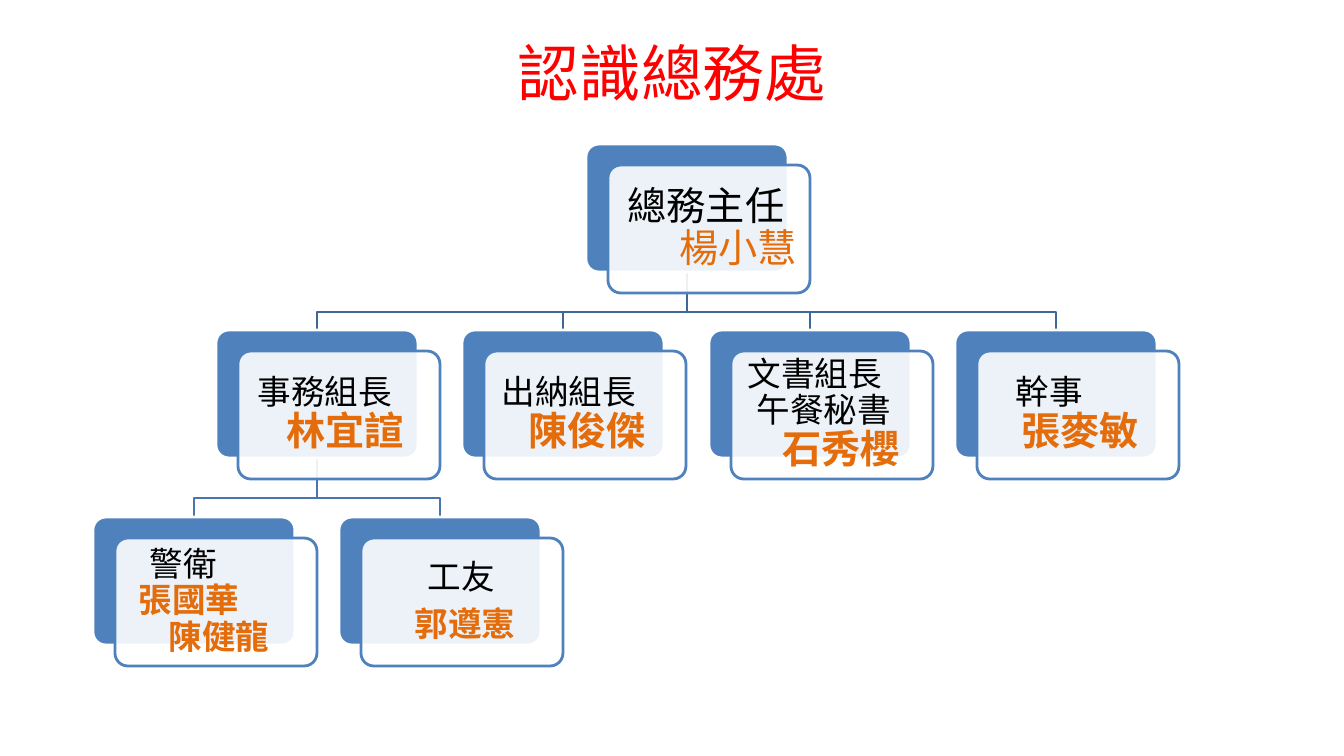
from lxml import etree
from pptx import Presentation
from pptx.dml.color import RGBColor
from pptx.enum.shapes import MSO_SHAPE
from pptx.enum.text import MSO_ANCHOR, PP_ALIGN
from pptx.oxml.ns import qn
from pptx.util import Emu, Pt

ROUND = MSO_SHAPE.ROUNDED_RECTANGLE
MIDDLE = MSO_ANCHOR.MIDDLE
LEFT, CENTER = PP_ALIGN.LEFT, PP_ALIGN.CENTER

RED = RGBColor(0xFF, 0x00, 0x00)
BLACK = RGBColor(0x00, 0x00, 0x00)
WHITE = RGBColor(0xFF, 0xFF, 0xFF)
ORANGE = RGBColor(0xE4, 0x6C, 0x0A)
BLUE = RGBColor(0x4F, 0x81, 0xBD)
NAVY = RGBColor(0x3F, 0x67, 0x97)
STEEL = RGBColor(0x48, 0x75, 0xAC)

LATIN, HAN = "Calibri", "Noto Sans CJK SC"
CARD_W, CARD_H = 202, 128
SHIFT_X, SHIFT_Y = 22, 21
DROP = 40


def px(n):
    return Emu(round(n * 9071.43))


def post(text, indent, size=24):
    return dict(text=text, indent=indent, size=size)


def name(text, indent, size=28, bold=True):
    return dict(text=text, indent=indent, size=size, bold=bold,
                color=ORANGE, font=HAN)


# Each card: column in half steps, row, lines of text, space between lines
CARDS = {
    "chief": (4, 0, [dict(post("總務主任", 16, 28), font=HAN),
                     name("楊小慧", 68, bold=False)], 0),
    "affairs": (1, 1, [post("事務組長", 16), name("林宜諠", 45)], 0),
    "guard": (0, 2, [post("警衛", 31), name("張國華", 20, 24),
                     name("陳健龍", 50, 24)], 0),
    "worker": (2, 2, [post("工友", 63), name("郭遵憲", 50, 24)], 8),
    "cashier": (3, 1, [post("出納組長", 14), name("陳俊傑", 41)], 0),
    "papers": (5, 1, [post("文書組長", 13), post("午餐秘書", 22),
                      name("石秀櫻", 48)], 0),
    "clerk": (7, 1, [post("幹事", 35), name("張麥敏", 41)], 0),
}
LINKS = [
    ("chief", "clerk", NAVY), ("chief", "papers", NAVY),
    ("chief", "cashier", NAVY), ("affairs", "worker", STEEL),
    ("affairs", "guard", STEEL), ("chief", "affairs", NAVY),
]


def place(key):
    """Left and top of a card's back plate."""
    col, row = CARDS[key][:2]
    return round(93 + 123.15 * col), round(144 + 186.5 * row)


def write(para, text, size=24, color=BLACK, font=LATIN, bold=False,
          indent=0, align=LEFT, lines=0.9, before=0):
    if indent:
        para._p.get_or_add_pPr().set("marL", str(px(indent)))
    para.alignment = align
    para.line_spacing = lines
    para.space_before = Pt(before)
    run = para.add_run()
    run.text = text
    run.font.size = Pt(size)
    run.font.bold = bold
    run.font.color.rgb = color
    run.font.name = font
    east = etree.SubElement(run._r.get_or_add_rPr(), qn("a:ea"))
    east.set("typeface", HAN)


def set_frame(frame, wrap):
    frame.margin_left = frame.margin_right = 0
    frame.margin_top = frame.margin_bottom = 0
    frame.vertical_anchor = MIDDLE
    frame.word_wrap = wrap


def plate(shapes, left, top, fill, line, alpha=None):
    shape = shapes.add_shape(ROUND, px(left), px(top), px(CARD_W), px(CARD_H))
    shape.adjustments[0] = 0.1
    shape.shadow.inherit = False
    shape.fill.solid()
    shape.fill.fore_color.rgb = fill
    shape.line.color.rgb = line
    shape.line.width = Pt(2)
    if alpha:
        tint = shape._element.spPr.find(qn("a:solidFill"))[0]
        etree.SubElement(tint, qn("a:alpha")).set("val", str(alpha * 1000))
    return shape


def card(shapes, key):
    left, top = place(key)
    texts, gap = CARDS[key][2:]
    plate(shapes, left, top, BLUE, WHITE)
    front = plate(shapes, left + SHIFT_X, top + SHIFT_Y, WHITE, BLUE, 90)
    frame = front.text_frame
    set_frame(frame, True)
    for i, item in enumerate(texts):
        para = frame.add_paragraph() if i else frame.paragraphs[0]
        write(para, before=gap if i else 0, **item)


def link(shapes, boss, staff, color):
    """Bent line from the bottom of one card to the top of another."""
    (x1, y1), (x2, y2) = place(boss), place(staff)
    x1, x2, y1 = x1 + CARD_W // 2, x2 + CARD_W // 2, y1 + CARD_H
    path = shapes.build_freeform(px(x1), px(y1))
    bends = [(x1, y1 + DROP), (x2, y1 + DROP), (x2, y2)]
    path.add_line_segments([(px(x), px(y)) for x, y in bends], close=False)
    line = path.convert_to_shape()
    line.shadow.inherit = False
    line.fill.background()
    line.line.color.rgb = color
    line.line.width = Pt(2)


def head(title, text):
    title.left, title.top = px(517), px(33)
    title.width, title.height = px(310), px(77)
    set_frame(title.text_frame, False)
    write(title.text_frame.paragraphs[0], text, size=44, color=RED, font=HAN,
          align=CENTER, lines=1.0)


def main():
    deck = Presentation()
    deck.slide_width, deck.slide_height = px(1344), px(756)
    slide = deck.slides.add_slide(deck.slide_layouts[5])
    head(slide.shapes.title, "認識總務處")
    for boss, staff, color in LINKS:
        link(slide.shapes, boss, staff, color)
    for key in CARDS:
        card(slide.shapes, key)
    deck.save("out.pptx")


if __name__ == "__main__":
    main()
